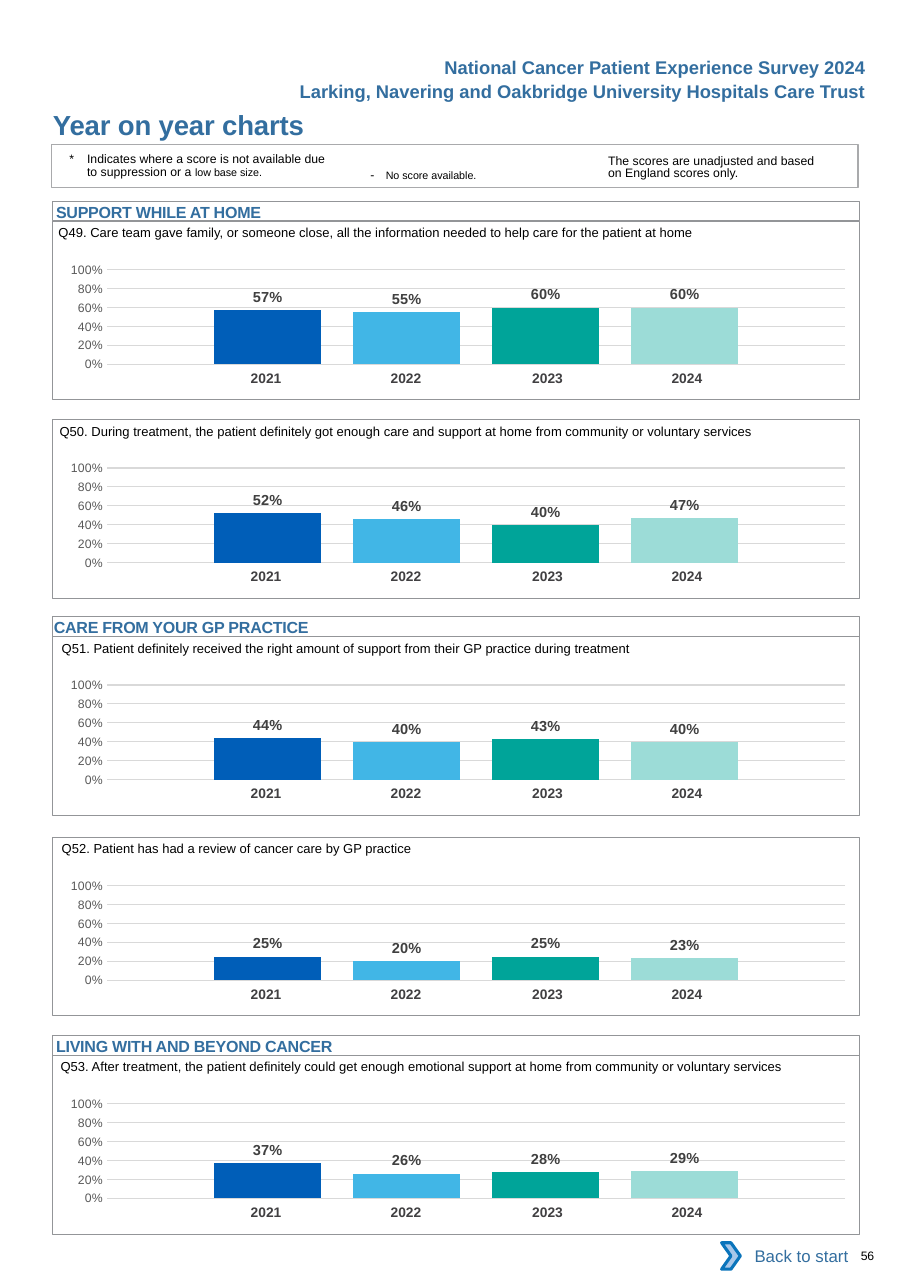
from lxml import etree
from pptx import Presentation
from pptx.chart.data import CategoryChartData
from pptx.dml.color import RGBColor
from pptx.enum.chart import XL_CHART_TYPE as ChartType
from pptx.enum.chart import XL_LABEL_POSITION as LabelPosition
from pptx.enum.chart import XL_TICK_MARK as TickMark
from pptx.enum.shapes import MSO_SHAPE as Preset
from pptx.enum.text import MSO_ANCHOR as Anchor
from pptx.enum.text import PP_ALIGN as Align
from pptx.oxml.ns import qn
from pptx.util import Inches, Pt

WIDTH, HEIGHT = Inches(8.26), Inches(11.69)
BLUE, GREY, BLACK = "336E9F", "939598", "000000"
PANEL_LEFT, PANEL_WIDTH, PANEL_HEIGHT = 5.8, 88.6, 13.86
YEARS = {"2021": "005EB8", "2022": "41B6E6", "2023": "00A499", "2024": "9CDCD7"}
YEAR_COLUMNS = (15.38, 15.38, 16.22, 15.38)
YEAR_RIGHT_MARGINS = (0, 0, 0.04, 0.12)
NO_TABLE_STYLE = "{2D5ABB26-0587-4C30-8999-92F81FD0307C}"

HEADINGS = [
    ("SUPPORT WHILE AT HOME", 17.19, 0.03),
    ("CARE FROM YOUR GP PRACTICE", 49.44, 0.01),
    ("LIVING WITH AND BEYOND CANCER", 81.95, 0.03),
]
PANELS = [
    ("Q49. Care team gave family, or someone close, all the information needed "
     "to help care for the patient at home", 17.19, 6.42, (0.57, 0.55, 0.6, 0.6)),
    ("Q50. During treatment, the patient definitely got enough care and support "
     "at home from community or voluntary services", 32.59, 6.54, (0.52, 0.46, 0.4, 0.47)),
    ("Q51. Patient definitely received the right amount of support from their "
     "GP practice during treatment", 49.44, 6.78, (0.44, 0.4, 0.43, 0.4)),
    ("Q52. Patient has had a review of cancer care by GP practice",
     65.01, 6.78, (0.25, 0.2, 0.25, 0.23)),
    ("Q53. After treatment, the patient definitely could get enough emotional "
     "support at home from community or voluntary services", 81.95, 6.66, (0.37, 0.26, 0.28, 0.29)),
]


def color(value):
    return RGBColor.from_string(value)


def across(share):
    return round(WIDTH * share / 100)


def down(share):
    return round(HEIGHT * share / 100)


def place(left, top, width, height):
    return across(left), down(top), across(width), down(height)


def style_font(font, size, shade=BLACK, bold=False):
    font.name, font.size, font.bold = "Arial", Pt(size), bold
    font.color.rgb = color(shade)


def clear_margins(frame):
    frame.margin_left = frame.margin_right = 0
    frame.margin_top = frame.margin_bottom = 0


def add_label(slide, box, text, size, shade=BLACK, bold=False, align=Align.LEFT, spacing=0):
    frame = slide.shapes.add_textbox(*place(*box)).text_frame
    clear_margins(frame)
    frame.word_wrap = True
    frame.text = text
    paragraph = frame.paragraphs[0]
    paragraph.alignment = align
    for run in paragraph.runs:
        style_font(run.font, size, shade, bold)
        run._r.get_or_add_rPr().set("spc", str(spacing))
    return paragraph


def add_small_run(paragraph, text, size):
    run = paragraph.add_run()
    run.text = text
    style_font(run.font, size)


def add_frame(slide, box, line=GREY, weight=0.5, fill=None, preset=Preset.RECTANGLE):
    shape = slide.shapes.add_shape(preset, *place(*box))
    shape.shadow.inherit = False
    shape.line.color.rgb = color(line)
    shape.line.width = Pt(weight)
    if fill:
        shape.fill.solid()
        shape.fill.fore_color.rgb = color(fill)
    else:
        shape.fill.background()
    return shape


def add_heading(slide, text, panel_top, indent):
    shape = add_frame(slide, (PANEL_LEFT, panel_top - 1.58, PANEL_WIDTH, 1.54))
    frame = shape.text_frame
    clear_margins(frame)
    frame.margin_left, frame.margin_top = Inches(indent), Inches(0.01)
    frame.vertical_anchor = Anchor.TOP
    frame.text = text
    paragraph = frame.paragraphs[0]
    paragraph.alignment = Align.LEFT
    run = paragraph.runs[0]
    style_font(run.font, 10.5, BLUE, True)
    run._r.get_or_add_rPr().set("spc", "-15")


def add_years(slide, top):
    box = place(20.94, top, sum(YEAR_COLUMNS), 2.31)
    graphic = slide.shapes.add_table(1, len(YEARS), *box)
    graphic.element.find(".//" + qn("a:tableStyleId")).text = NO_TABLE_STYLE
    table = graphic.table
    table.first_row = table.horz_banding = False
    for index, year in enumerate(YEARS):
        table.columns[index].width = across(YEAR_COLUMNS[index])
        cell = table.cell(0, index)
        cell.fill.background()
        cell.margin_right = Inches(YEAR_RIGHT_MARGINS[index])
        cell.text = year
        paragraph = cell.text_frame.paragraphs[0]
        paragraph.alignment = Align.CENTER
        style_font(paragraph.runs[0].font, 9, "414042", True)


def set_plot_layout(chart, **shares):
    area = chart.element.find(".//" + qn("c:plotArea"))
    for layout in area.findall(qn("c:layout")):
        area.remove(layout)
    layout = etree.Element(qn("c:layout"))
    manual = etree.SubElement(layout, qn("c:manualLayout"))
    settings = {"layoutTarget": "inner", "xMode": "edge", "yMode": "edge", **shares}
    for name, value in settings.items():
        etree.SubElement(manual, qn("c:" + name)).set("val", str(value))
    area.insert(0, layout)


def style_value_axis(axis):
    axis.minimum_scale, axis.maximum_scale, axis.major_unit = 0, 1, 0.2
    axis.major_tick_mark = axis.minor_tick_mark = TickMark.NONE
    axis.format.line.fill.background()
    axis.major_gridlines.format.line.color.rgb = color("D9D9D9")
    axis.major_gridlines.format.line.width = Pt(0.75)
    axis.tick_labels.number_format = "0%"
    axis.tick_labels.number_format_is_linked = False
    style_font(axis.tick_labels.font, 8, "595959")


def add_score_chart(slide, top, scores):
    data = CategoryChartData(number_format="0%")
    data.categories = ["1"]
    for index, score in enumerate(scores, 1):
        data.add_series(f"Series {index}", [score])
    box = place(4.72, top, PANEL_WIDTH, 11.04)
    chart = slide.shapes.add_chart(ChartType.COLUMN_CLUSTERED, *box, data).chart
    chart.has_legend = chart.has_title = False
    chart.font.name, chart.font.size = "Calibri", Pt(10)
    chart.font.color.rgb = color(BLACK)
    chart.category_axis.visible = False
    style_value_axis(chart.value_axis)
    plot = chart.plots[0]
    plot.vary_by_categories = False
    plot.gap_width, plot.overlap = 200, -30
    for series, shade in zip(plot.series, YEARS.values()):
        series.format.fill.solid()
        series.format.fill.fore_color.rgb = color(shade)
        labels = series.data_labels
        labels.show_value = True
        labels.position = LabelPosition.OUTSIDE_END
        labels.number_format, labels.number_format_is_linked = "0%", False
        style_font(labels.font, 9.5, "404040", True)
    set_plot_layout(chart, x=0.08, y=0.145, w=0.915, h=0.666)


def add_panel(slide, question, top, question_left, scores):
    add_years(slide, top + 11.16)
    add_score_chart(slide, top + 2.15, scores)
    add_frame(slide, (PANEL_LEFT, top, PANEL_WIDTH, PANEL_HEIGHT))
    add_label(slide, (question_left, top + 0.26, 87, 1.28), question, 8.5)


def add_notes(slide):
    add_frame(slide, (5.69, 11.21, PANEL_WIDTH, 3.34), "A9AAAC", 0.75)
    base_size = add_label(slide, (7.63, 11.95, 28.7, 2.1),
                          "*\tIndicates where a score is not available due to suppression or a ", 8)
    base_size._p.get_or_add_pPr().set("marL", str(Inches(0.16)))
    base_size._p.get_or_add_pPr().set("indent", str(-Inches(0.16)))
    add_small_run(base_size, "low base size.", 7)
    no_score = add_label(slide, (40.7, 13, 20, 1.1), "- ", 8, spacing=260)
    add_small_run(no_score, "No score available.", 7)
    unadjusted = add_label(slide, (66.83, 12.06, 24.33, 2),
                           "The scores are unadjusted and based on England scores only.", 8)
    base_size.line_spacing = unadjusted.line_spacing = Pt(8.1)


def add_footer(slide):
    add_label(slide, (80.15, 96.7, 13.08, 1.6), "Back to start", 11, BLUE, align=Align.RIGHT)
    add_frame(slide, (79.3, 96.49, 2.06, 2.05), "0A74BB", 2, "A8C7E9", Preset.CHEVRON)
    add_label(slide, (94.6, 96.92, 5, 1.11), "56", 8, spacing=-20)


def main():
    presentation = Presentation()
    presentation.slide_width, presentation.slide_height = WIDTH, HEIGHT
    slide = presentation.slides.add_slide(presentation.slide_layouts[6])
    add_label(slide, (15.16, 4.36, 80, 1.71), "National Cancer Patient Experience Survey 2024",
              12, BLUE, True, Align.RIGHT)
    add_label(slide, (15.16, 6.24, 80, 1.71),
              "Larking, Navering and Oakbridge University Hospitals Care Trust",
              12, BLUE, True, Align.RIGHT)
    add_label(slide, (5.81, 8.4, 54, 2.57), "Year on year charts", 18, BLUE, True, spacing=-10)
    add_notes(slide)
    for panel in PANELS:
        add_panel(slide, *panel)
    for heading in HEADINGS:
        add_heading(slide, *heading)
    add_footer(slide)
    presentation.save("out.pptx")


if __name__ == "__main__":
    main()
